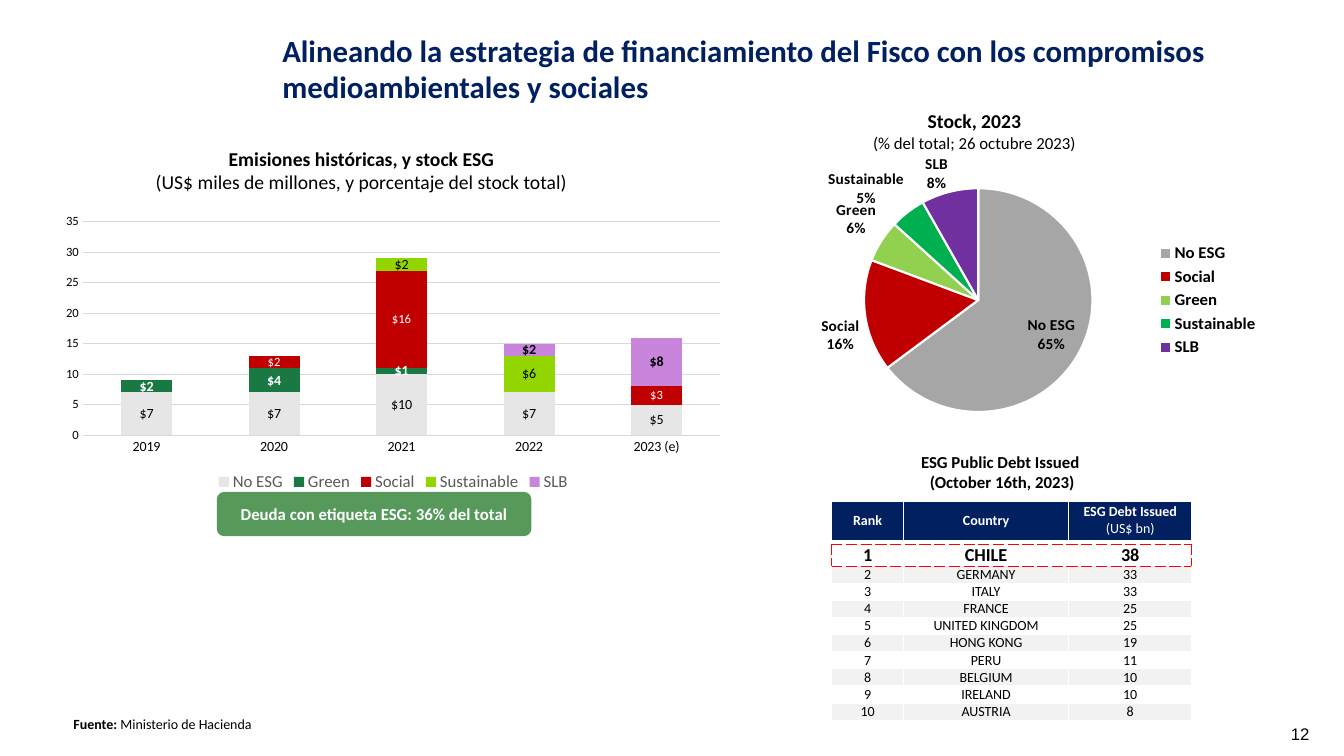
from lxml import etree
from pptx import Presentation
from pptx.chart.data import CategoryChartData
from pptx.dml.color import RGBColor
from pptx.enum.chart import XL_CHART_TYPE, XL_LABEL_POSITION, XL_LEGEND_POSITION, XL_TICK_MARK
from pptx.enum.shapes import MSO_SHAPE
from pptx.enum.text import MSO_ANCHOR, MSO_AUTO_SIZE, PP_ALIGN
from pptx.oxml import parse_xml
from pptx.oxml.ns import nsdecls, qn
from pptx.util import Inches, Pt

KINDS = ["No ESG", "Green", "Social", "Sustainable", "SLB"]
RANKING = [("CHILE", 38), ("GERMANY", 33), ("ITALY", 33), ("FRANCE", 25), ("UNITED KINGDOM", 25),
           ("HONG KONG", 19), ("PERU", 11), ("BELGIUM", 10), ("IRELAND", 10), ("AUSTRIA", 8)]


def rgb(value):
    return RGBColor.from_string(value)


def style(font, size, color="000000", bold=False, name="Calibri"):
    font.size, font.bold, font.name = Pt(size), bold, name
    font.color.rgb = rgb(color)


def put(p, text, align=PP_ALIGN.CENTER, **fmt):
    p.alignment = align
    r = p.add_run()
    r.text = text
    style(r.font, **fmt)


def fill(target, color):
    target.fill.solid()
    target.fill.fore_color.rgb = rgb(color)


def add_box(s, box, inset=None):
    tf = s.shapes.add_textbox(*map(Inches, box)).text_frame
    tf.word_wrap = True
    if inset is not None:
        tf.margin_left = tf.margin_right = tf.margin_top = tf.margin_bottom = Inches(inset)
        tf.vertical_anchor = MSO_ANCHOR.MIDDLE
    return tf


def add_heading(s, box, first, second):
    tf = add_box(s, box, 0.06)
    put(tf.paragraphs[0], first[0], **first[1])
    put(tf.add_paragraph(), second[0], **second[1])


def add_title(s, box, text):
    sp = s.shapes.title
    sp.left, sp.top, sp.width, sp.height = map(Inches, box)
    tf = sp.text_frame
    tf.word_wrap = True
    tf.auto_size = MSO_AUTO_SIZE.NONE
    tf.vertical_anchor = MSO_ANCHOR.TOP
    put(tf.paragraphs[0], text, PP_ALIGN.LEFT, size=22, color="002060", bold=True)


def add_legend(chart, position, **fmt):
    chart.has_legend = True
    chart.legend.position = position
    chart.legend.include_in_layout = False
    style(chart.legend.font, **fmt)


def add_issuance_chart(s, box):
    data = CategoryChartData()
    data.categories = ["2019", "2020", "2021", "2022", "2023 (e)"]
    values = [(7, 7, 10, 7, 5), (2, 4, 1, None, None), (None, 2, 16, None, 3),
              (None, None, 2, 6, None), (None, None, None, 2, 8)]
    for name, vals in zip(KINDS, values):
        data.add_series(name, vals)
    chart = s.shapes.add_chart(XL_CHART_TYPE.COLUMN_STACKED, *map(Inches, box), data).chart
    chart.has_title = False
    style(chart.font, 10)
    add_legend(chart, XL_LEGEND_POSITION.BOTTOM, size=12, color="595959")
    plot = chart.plots[0]
    plot.gap_width, plot.overlap = 150, 100
    plot.vary_by_categories = False
    cat, val = chart.category_axis, chart.value_axis
    for axis, size in ((cat, 10), (val, 9)):
        axis.major_tick_mark = axis.minor_tick_mark = XL_TICK_MARK.NONE
        style(axis.tick_labels.font, size)
    val.minimum_scale, val.maximum_scale, val.major_unit = 0, 35, 5
    val.format.line.fill.background()
    for line in (cat.format.line, val.major_gridlines.format.line):
        line.color.rgb = rgb("D9D9D9")
        line.width = Pt(0.75)
    looks = [("E7E6E6", 10, "000000", False), ("1A7842", 10, "FFFFFF", True),
             ("C00000", 9, "FFFFFF", False), ("93D500", 10, "000000", False),
             ("C984DC", 10, "000000", True)]
    for series, (color, size, ink, bold) in zip(plot.series, looks):
        fill(series.format, color)
        labels = series.data_labels
        labels.show_value = True
        labels.number_format, labels.number_format_is_linked = '"$"#,##0', False
        labels.position = XL_LABEL_POSITION.CENTER
        style(labels.font, size, ink, bold)


def show_name_and_percent(labels):
    for tag, shown in (("showVal", "0"), ("showCatName", "1"), ("showPercent", "1")):
        labels.find(qn("c:" + tag)).set("val", shown)
    separator = etree.Element(qn("c:separator"))
    separator.text = "\n"
    flags = [e for e in labels if e.tag.startswith(qn("c:show")) and e.tag != qn("c:showLeaderLines")]
    flags[-1].addnext(separator)


def add_stock_pie(s, box):
    data = CategoryChartData()
    data.categories = ["No ESG", "Social", "Green", "Sustainable", "SLB"]
    data.add_series("Series 1", (64, 16, 6, 5, 8))
    chart = s.shapes.add_chart(XL_CHART_TYPE.PIE, *map(Inches, box), data).chart
    chart.has_title = False
    style(chart.font, 10, bold=True)
    add_legend(chart, XL_LEGEND_POSITION.RIGHT, size=12, bold=True)
    series = chart.plots[0].series[0]
    for i, color in enumerate(["A6A6A6", "C00000", "92D050", "00B050", "7030A0"]):
        point = series.points[i].format
        fill(point, color)
        point.line.color.rgb = rgb("FFFFFF")
        point.line.width = Pt(1.5)
    labels = series.data_labels
    labels.number_format, labels.number_format_is_linked = "0%", False
    labels.position = XL_LABEL_POSITION.OUTSIDE_END
    style(labels.font, 11, bold=True)
    labels.show_value = False
    labels.show_category_name = labels.show_percentage = True
    largest = series.points[0].data_label
    style(largest.font, 11, bold=True)
    largest.position = XL_LABEL_POSITION.BEST_FIT
    show_name_and_percent(labels._element)
    show_name_and_percent(labels._element.find(qn("c:dLbl")))
    area = chart._chartSpace.chart.plotArea
    for old in area.findall(qn("c:layout")):
        area.remove(old)
    sizes = zip("xywh", (0.196, 0.114, 0.453, 0.771))
    modes = "".join(f'<c:{m} val="{v}"/>' for m, v in
                    (("layoutTarget", "inner"), ("xMode", "edge"), ("yMode", "edge")))
    modes += "".join(f'<c:{k} val="{v}"/>' for k, v in sizes)
    area.insert(0, parse_xml(f'<c:layout {nsdecls("c")}><c:manualLayout>{modes}'
                             '</c:manualLayout></c:layout>'))


def set_borders(cell, dashed):
    tcPr = cell._tc.get_or_add_tcPr()
    for i, side in enumerate("LRTB"):
        color, dash = ("FF0000", "dash") if side in dashed else ("FFFFFF", "solid")
        tcPr.insert(i, parse_xml(
            f'<a:ln{side} {nsdecls("a")} w="12700"><a:solidFill><a:srgbClr val="{color}"/>'
            f'</a:solidFill><a:prstDash val="{dash}"/></a:ln{side}>'))


def add_ranking(s, box):
    rows = [("Rank", "Country", "ESG Debt Issued "), ("", "", "")]
    rows += [(str(i), name, str(debt)) for i, (name, debt) in enumerate(RANKING, 1)]
    table = s.shapes.add_table(len(rows), 3, *map(Inches, box)).table
    for col, width in zip(table.columns, (0.71, 1.64, 1.22)):
        col.width = Inches(width)
    dashes = {1: ("B", "B", "B"), 2: ("LTB", "TB", "RTB"), 3: ("T", "T", "T")}
    for i, texts in enumerate(rows):
        table.rows[i].height = Inches({0: 0.39, 1: 0.04, 2: 0.18}.get(i, 0.17))
        size, ink, bold = {0: (10, "FFFFFF", True), 2: (13, "000000", True)}.get(i, (10, "000000", False))
        for j, text in enumerate(texts):
            cell = table.cell(i, j)
            cell.margin_top = cell.margin_bottom = 0
            cell.vertical_anchor = MSO_ANCHOR.MIDDLE
            fill(cell, "002060" if i == 0 else "F2F2F2" if i > 2 and i % 2 else "FFFFFF")
            set_borders(cell, dashes.get(i, ("", "", ""))[j])
            p = cell.text_frame.paragraphs[0]
            if text:
                put(p, text, size=size, color=ink, bold=bold)
            else:
                p._p.get_or_add_endParaRPr().set("sz", "100")
    put(table.cell(0, 2).text_frame.paragraphs[0], "(US$ bn)", size=10, color="FFFFFF")


def add_badge(s, box, text):
    sp = s.shapes.add_shape(MSO_SHAPE.ROUNDED_RECTANGLE, *map(Inches, box))
    sp.shadow.inherit = False
    fill(sp, "56995B")
    sp.line.fill.background()
    sp.text_frame.vertical_anchor = MSO_ANCHOR.MIDDLE
    put(sp.text_frame.paragraphs[0], text, size=12, color="FFFFFF", bold=True)


def add_footer(s, source_box, number_box):
    p = add_box(s, source_box).paragraphs[0]
    put(p, "Fuente: ", PP_ALIGN.LEFT, size=10, bold=True)
    put(p, "Ministerio de Hacienda", PP_ALIGN.LEFT, size=10)
    put(add_box(s, number_box, 0).paragraphs[0], "12", size=12, name="Arial")


def main():
    prs = Presentation()
    prs.slide_width, prs.slide_height = Inches(13.33), Inches(7.5)
    s = prs.slides.add_slide(prs.slide_layouts[5])
    add_title(s, (2.7, 0.26, 9.64, 0.84), "Alineando la estrategia de financiamiento del Fisco "
              "con los compromisos medioambientales y sociales")
    add_issuance_chart(s, (0.52, 2.07, 6.76, 2.85))
    add_heading(s, (1.07, 1.4, 5.03, 0.58),
                ("Emisiones históricas, y stock ESG", dict(size=14, bold=True)),
                ("(US$ miles de millones, y porcentaje del stock total)", dict(size=14)))
    add_badge(s, (2.15, 4.88, 3.12, 0.44), "Deuda con etiqueta ESG: 36% del total")
    add_stock_pie(s, (7.59, 1.48, 5, 2.94))
    add_heading(s, (7.15, 1.02, 5.03, 0.55), ("Stock, 2023", dict(size=14, bold=True)),
                ("(% del total; 26 octubre 2023)", dict(size=12)))
    add_heading(s, (7.18, 4.42, 5.52, 0.52), ("ESG Public Debt Issued ", dict(size=12, bold=True)),
                ("(October 16th, 2023)", dict(size=12, bold=True)))
    add_ranking(s, (8.25, 4.97, 3.57, 2.2))
    add_footer(s, (0.63, 7.05, 5.71, 0.27), (12.64, 7.17, 0.51, 0.21))
    prs.save("out.pptx")


if __name__ == "__main__":
    main()
